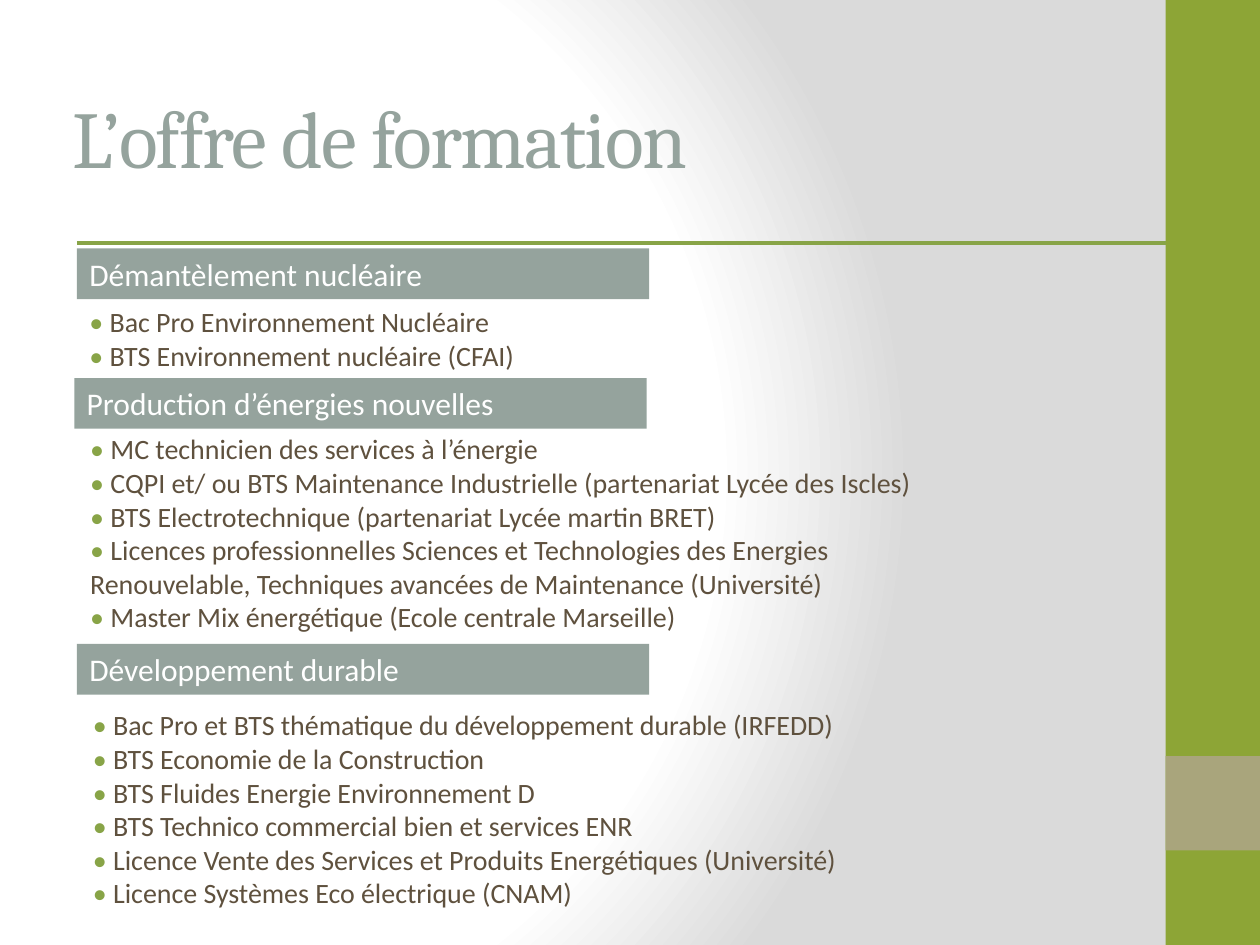
from dataclasses import dataclass

from pptx import Presentation
from pptx.dml.color import RGBColor
from pptx.enum.shapes import MSO_CONNECTOR, MSO_SHAPE
from pptx.enum.text import MSO_ANCHOR, MSO_AUTO_SIZE, PP_ALIGN
from pptx.oxml import parse_xml
from pptx.oxml.ns import nsdecls
from pptx.util import Pt

RECTANGLE = MSO_SHAPE.RECTANGLE
STRAIGHT = MSO_CONNECTOR.STRAIGHT
MIDDLE = MSO_ANCHOR.MIDDLE
LEFT = PP_ALIGN.LEFT
FIT_SHAPE = MSO_AUTO_SIZE.SHAPE_TO_FIT_TEXT


@dataclass(frozen=True)
class Theme:
    green: RGBColor = RGBColor(0x8D, 0xA5, 0x36)
    khaki: RGBColor = RGBColor(0xA9, 0xA5, 0x7C)
    sage: RGBColor = RGBColor(0x95, 0xA3, 0x9D)
    accent: RGBColor = RGBColor(0x88, 0xA4, 0x47)
    brown: RGBColor = RGBColor(0x5F, 0x51, 0x3E)
    white: RGBColor = RGBColor(0xFF, 0xFF, 0xFF)
    heading_font: str = "Cambria"
    body_font: str = "Calibri"
    title_size: Pt = Pt(46)
    band_size: Pt = Pt(18)
    item_size: Pt = Pt(16)


theme = Theme()

# Heading, its left and top, then the list's left, top, width, height and items
SECTIONS = [
    ("Démantèlement nucléaire", 44, 142, (44, 170.5, 315, 46), [
        "Bac Pro Environnement Nucléaire",
        "BTS Environnement nucléaire (CFAI)",
    ]),
    ("Production d’énergies nouvelles", 42.5, 216, (44.5, 243.3, 492.5, 124), [
        "MC technicien des services à l’énergie",
        "CQPI et/ ou BTS Maintenance Industrielle (partenariat Lycée des Iscles)",
        "BTS Electrotechnique (partenariat Lycée martin BRET)",
        "Licences professionnelles Sciences et Technologies des Energies "
        "Renouvelable, Techniques avancées de Maintenance (Université)",
        "Master Mix énergétique (Ecole centrale Marseille)",
    ]),
    ("Développement durable", 44, 368, (46, 401, 451.5, 124), [
        "Bac Pro et BTS thématique du développement durable (IRFEDD)",
        "BTS Economie de la Construction",
        "BTS Fluides Energie Environnement D",
        "BTS Technico commercial bien et services ENR",
        "Licence Vente des Services et Produits Energétiques (Université)",
        "Licence Systèmes Eco électrique (CNAM)",
    ]),
]

prs = Presentation()
prs.slide_width, prs.slide_height = Pt(720), Pt(540)
slide = prs.slides.add_slide(prs.slide_layouts[6])
shapes = slide.shapes


def add_block(left, top, width, height, color):
    block = shapes.add_shape(RECTANGLE, Pt(left), Pt(top), Pt(width), Pt(height))
    block.shadow.inherit = False
    block.fill.solid()
    block.fill.fore_color.rgb = color
    block.line.fill.background()
    return block


def style(paragraph, font_name, size, color):
    paragraph.alignment = LEFT
    paragraph.font.name = font_name
    paragraph.font.size = size
    paragraph.font.color.rgb = color


# Background: circular gradient from white to grey
slide._element.cSld.insert(0, parse_xml(
    f'<p:bg {nsdecls("p", "a")}><p:bgPr><a:gradFill rotWithShape="1"><a:gsLst>'
    '<a:gs pos="0"><a:srgbClr val="FFFFFF"/></a:gs>'
    '<a:gs pos="75000"><a:srgbClr val="FFFFFF"/></a:gs>'
    '<a:gs pos="100000"><a:srgbClr val="DADADA"/></a:gs></a:gsLst>'
    '<a:path path="circle"><a:fillToRect l="20000" t="50000" r="100000" b="50000"/></a:path>'
    '</a:gradFill><a:effectLst/></p:bgPr></p:bg>'))

# Side bar
add_block(666, 0, 54, 540, theme.green)
add_block(666, 432, 54, 54, theme.khaki)

# Title and rule
title = shapes.add_textbox(Pt(34.5), Pt(47), Pt(634), Pt(62)).text_frame
title.word_wrap = True
title.vertical_anchor = MIDDLE
title_line = title.paragraphs[0]
title_line.text = "L’offre de formation"
style(title_line, theme.heading_font, theme.title_size, theme.sage)
title_line.runs[0].font._element.set("spc", "-100")

rule = shapes.add_connector(STRAIGHT, Pt(44), Pt(139), Pt(666), Pt(139))
rule.line.color.rgb = theme.accent
rule.line.width = Pt(2)
rule._element.spPr.append(parse_xml(f'<a:effectLst {nsdecls("a")}/>'))

# Sections: a heading band above its list
for heading, band_left, band_top, list_box, items in SECTIONS:
    band = add_block(band_left, band_top, 327, 29, theme.sage).text_frame
    band.word_wrap = True
    band.auto_size = FIT_SHAPE
    band.text = heading
    style(band.paragraphs[0], theme.body_font, theme.band_size, theme.white)

    courses = shapes.add_textbox(*map(Pt, list_box)).text_frame
    courses.word_wrap = True
    courses.auto_size = FIT_SHAPE
    for index, item in enumerate(items):
        course = courses.add_paragraph() if index else courses.paragraphs[0]
        style(course, theme.body_font, theme.item_size, theme.brown)
        bullet = course.add_run()
        bullet.text = "• "
        bullet.font.color.rgb = theme.accent
        course.add_run().text = item

prs.save("out.pptx")
